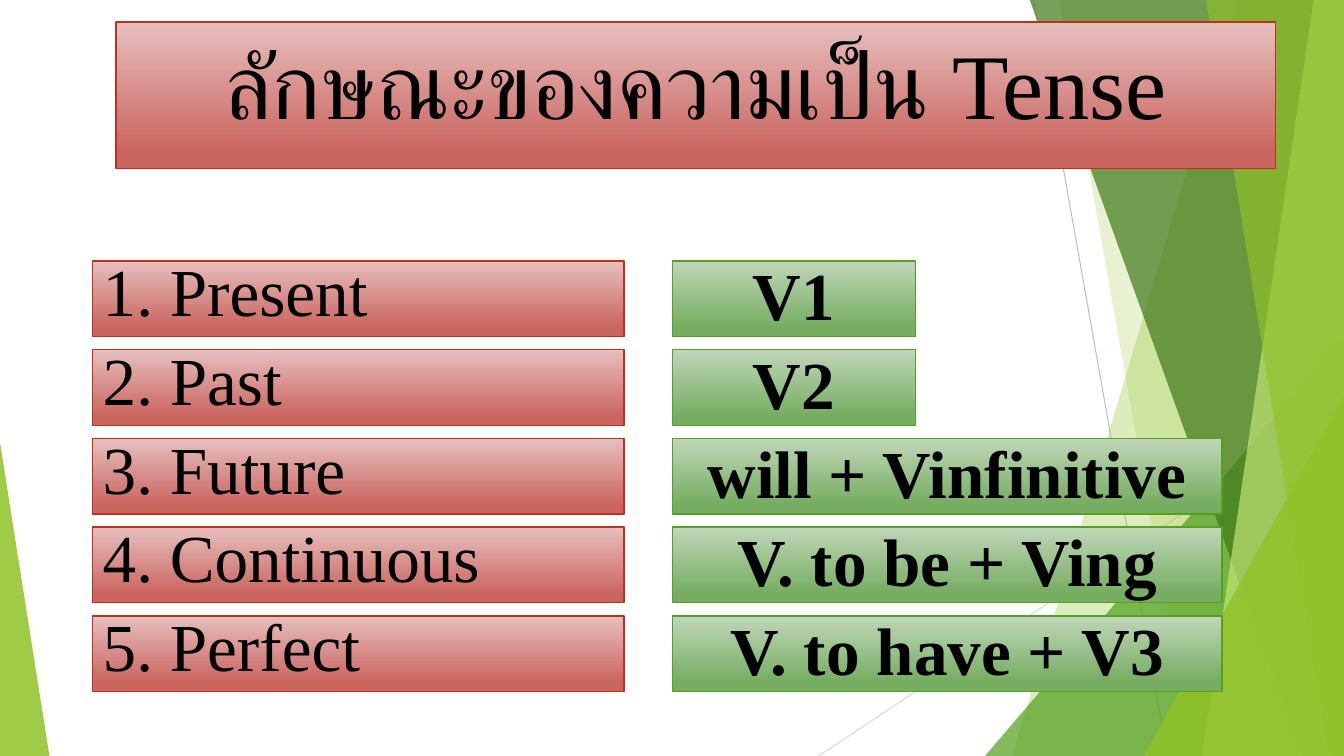
import pptx
import pptx.util
import pptx.dml.color
import pptx.enum.shapes
import pptx.enum.text
import pptx.oxml
import pptx.oxml.ns

Inches = pptx.util.Inches
SHAPES = pptx.enum.shapes.MSO_SHAPE
ALIGN = pptx.enum.text.PP_ALIGN
ANCHOR = pptx.enum.text.MSO_ANCHOR
qn = pptx.oxml.ns.qn
FONT = "Times New Roman"
RED = ("E6BFBE", "CB6560", "C42F1A")
GREEN = ("C0D6B9", "76AD61", "54A021")
TENSES = [
    ("1. Present", "V1", 2.41),
    ("2. Past", "V2", 2.41),
    ("3. Future", "will + Vinfinitive", 5.45),
    ("4. Continuous", "V. to be + Ving", 5.45),
    ("5. Perfect", "V. to have + V3", 5.45),
]


def color(value):
    return pptx.dml.color.RGBColor.from_string(value)


def paint_clear(shape, value, opacity):
    shape.shadow.inherit = False
    shape.line.fill.background()
    shape.fill.solid()
    shape.fill.fore_color.rgb = color(value)
    fill = shape.element.spPr.find(qn("a:solidFill"))
    alpha = pptx.oxml.parse_xml(
        '<a:alpha xmlns:a="http://schemas.openxmlformats.org/drawingml/2006/main" '
        f'val="{opacity * 1000}"/>')
    fill[0].append(alpha)


def paint_gradient(shape, palette):
    light, dark, edge = palette
    shape.shadow.inherit = False
    shape.fill.gradient()
    shape.fill.gradient_angle = 270
    for stop, value, position in zip(shape.fill.gradient_stops, (light, dark), (0, 0.88)):
        stop.color.rgb = color(value)
        stop.position = position
    shape.line.color.rgb = color(edge)
    shape.line.width = pptx.util.Pt(1)


def write(shape, text, size, align, anchor, bold=False, spacing=None):
    frame = shape.text_frame
    frame.text = text
    frame.word_wrap = True
    frame.auto_size = pptx.enum.text.MSO_AUTO_SIZE.NONE
    frame.vertical_anchor = anchor
    para = frame.paragraphs[0]
    para.alignment = align
    para.line_spacing = spacing
    span = para.runs[0]
    span.font.name = FONT
    span.font.size = pptx.util.Pt(size)
    span.font.bold = bold
    span.font.color.rgb = color("000000")
    complex_font = pptx.oxml.parse_xml(
        '<a:cs xmlns:a="http://schemas.openxmlformats.org/drawingml/2006/main" '
        f'typeface="{FONT}"/>')
    span.font._element.append(complex_font)


def add_ray(page, start, end, value):
    ray = page.shapes.add_connector(
        pptx.enum.shapes.MSO_CONNECTOR.STRAIGHT, *map(Inches, start + end))
    ray.line.color.rgb = color(value)
    ray.line.width = pptx.util.Pt(0.75)
    ray.element.spPr.append(pptx.oxml.parse_xml(
        '<a:effectLst xmlns:a="http://schemas.openxmlformats.org/drawingml/2006/main"/>'))


def add_band(page, right, bottom, top_x, bottom_x, value, opacity):
    builder = page.shapes.build_freeform(Inches(top_x), Inches(-0.01))
    corners = [(right, -0.01), (right, bottom), (bottom_x, bottom)]
    builder.add_line_segments([(Inches(x), Inches(y)) for x, y in corners], close=True)
    paint_clear(builder.convert_to_shape(), value, opacity)


def add_wedge(page, left, bottom, width, height, apex, value, opacity):
    wedge = page.shapes.add_shape(
        SHAPES.ISOSCELES_TRIANGLE, Inches(left), Inches(bottom - height),
        Inches(width), Inches(height))
    wedge.adjustments[0] = apex
    paint_clear(wedge, value, opacity)


def add_backdrop(page, right, bottom):
    add_ray(page, (10.25, 0), (11.58, bottom), "BFBFBF")
    add_ray(page, (right, 4.03), (8.12, bottom), "D9D9D9")
    add_band(page, right, bottom, 12.28, 10.04, "90C226", 30)
    add_band(page, right, bottom, 10.5, 11.83, "90C226", 20)
    add_wedge(page, right - 3.56, bottom, 3.56, 4.17, 1, "54A021", 72)
    add_band(page, right, bottom, 10.21, 12.91, "3F7819", 70)
    add_band(page, right, bottom, 13.03, 11.92, "C0E474", 70)
    add_band(page, right, bottom, 11.96, 13.18, "90C226", 65)
    add_wedge(page, right - 1.99, bottom, 1.99, 3.57, 1, "90C226", 80)
    add_wedge(page, 0, bottom, 0.49, 3.11, 0, "90C226", 85)


def place_title(page, left, top, width, height):
    title = page.shapes.title
    title.left, title.top, title.width, title.height = map(Inches, (left, top, width, height))
    paint_gradient(title, RED)
    write(title, "ลักษณะของความเป็น Tense", 66, ALIGN.CENTER, ANCHOR.TOP)
    title.element.getparent().append(title.element)


def add_bar(page, left, top, width, height, palette):
    bar = page.shapes.add_shape(
        SHAPES.RECTANGLE, Inches(left), Inches(top), Inches(width), Inches(height))
    paint_gradient(bar, palette)
    return bar


def add_tense_rows(page, left, top, pitch, height):
    for index, (tense, verb, verb_width) in enumerate(TENSES):
        row_top = top + index * pitch
        name_bar = add_bar(page, left, row_top, 5.27, height, RED)
        write(name_bar, tense, 48, ALIGN.LEFT, ANCHOR.MIDDLE, spacing=0.9)
        name_bar.text_frame.margin_top = 0
        name_bar.text_frame.margin_bottom = Inches(0.08)
        verb_bar = add_bar(page, left + 5.75, row_top, verb_width, height, GREEN)
        write(verb_bar, verb, 48, ALIGN.CENTER, ANCHOR.MIDDLE, bold=True, spacing=0.9)


def main():
    deck = pptx.Presentation()
    deck.slide_width = Inches(13.33)
    deck.slide_height = Inches(7.5)
    page = deck.slides.add_slide(deck.slide_layouts[5])
    page.background.fill.solid()
    page.background.fill.fore_color.rgb = color("FFFFFF")
    add_backdrop(page, 13.33, 7.5)
    place_title(page, 1.15, 0.22, 11.5, 1.45)
    add_tense_rows(page, 0.92, 2.59, 0.88, 0.75)
    deck.save("out.pptx")


if __name__ == "__main__":
    main()
